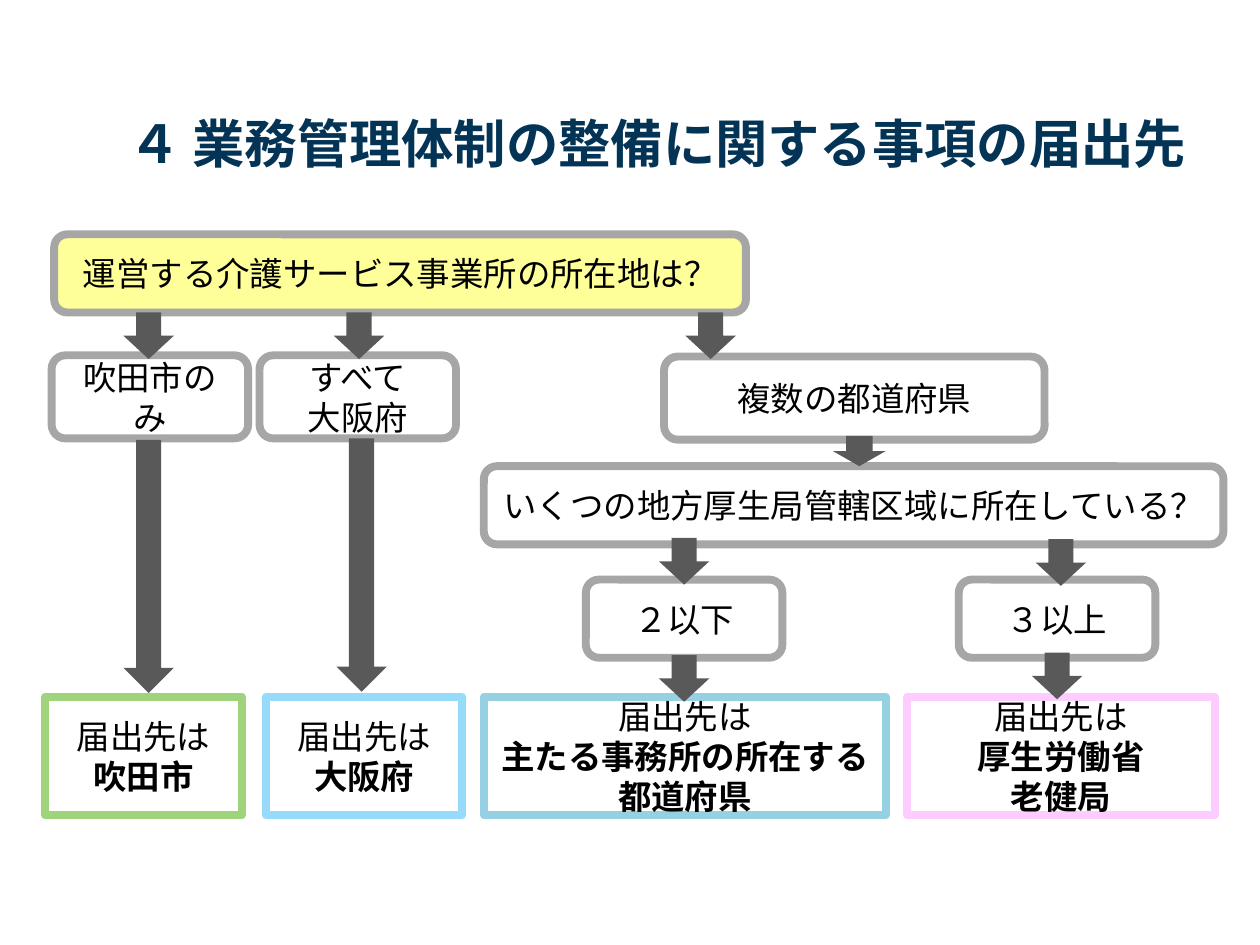
from lxml.etree import SubElement
from pptx import Presentation
from pptx.dml.color import RGBColor
from pptx.enum.shapes import MSO_SHAPE
from pptx.enum.text import MSO_ANCHOR, PP_ALIGN
from pptx.oxml.ns import qn
from pptx.util import Inches, Pt

NAVY = RGBColor(0x03, 0x33, 0x55)
BLACK = RGBColor(0x00, 0x00, 0x00)
WHITE = RGBColor(0xFF, 0xFF, 0xFF)
YELLOW = RGBColor(0xFF, 0xFF, 0x99)
GRAY = RGBColor(0xA6, 0xA6, 0xA6)
DARK_GRAY = RGBColor(0x59, 0x59, 0x59)
GREEN = RGBColor(0x9F, 0xD4, 0x7D)
SKY = RGBColor(0x97, 0xDB, 0xFB)
TEAL = RGBColor(0x95, 0xD1, 0xE2)
PINK = RGBColor(0xFF, 0xCC, 0xFF)


class FlowSlide:
    """Draws on a grid of 100 columns and 75 rows."""

    FONT = "Noto Sans CJK JP"
    TITLE_SIZE = Pt(29.9)
    BODY_SIZE = Pt(19.1)
    BORDER = Pt(4.5)

    def __init__(self, presentation):
        self.slide = presentation.slides.add_slide(presentation.slide_layouts[6])
        self.column = presentation.slide_width / 100
        self.row = presentation.slide_height / 75

    def place(self, left, top, width, height):
        return (round(left * self.column), round(top * self.row),
                round(width * self.column), round(height * self.row))

    def style(self, paragraph, size, color, bold=False):
        font = paragraph.font
        font.size, font.bold, font.name = size, bold, self.FONT
        font.color.rgb = color
        SubElement(font._element, qn("a:ea"), typeface=self.FONT)

    def title(self, text, *area):
        frame = self.slide.shapes.add_textbox(*self.place(*area)).text_frame
        frame.word_wrap = True
        frame.vertical_anchor = MSO_ANCHOR.MIDDLE
        paragraph = frame.paragraphs[0]
        paragraph.text = text
        paragraph.line_spacing = 0.9
        self.style(paragraph, self.TITLE_SIZE, NAVY, bold=True)
        # Hanging indent
        properties = paragraph._p.get_or_add_pPr()
        properties.set("marL", str(Inches(0.26)))
        properties.set("indent", str(-Inches(0.26)))

    def shape(self, kind, fill, *area):
        shape = self.slide.shapes.add_shape(kind, *self.place(*area))
        shape.shadow.inherit = False
        shape.fill.solid()
        shape.fill.fore_color.rgb = fill
        shape.line.fill.background()
        return shape

    def box(self, kind, lines, fill, border, *area):
        """Takes lines as (text, bold) pairs."""
        shape = self.shape(kind, fill, *area)
        shape.line.color.rgb = border
        shape.line.width = self.BORDER
        frame = shape.text_frame
        frame.word_wrap = True
        frame.vertical_anchor = MSO_ANCHOR.MIDDLE
        for index, (text, bold) in enumerate(lines):
            paragraph = frame.add_paragraph() if index else frame.paragraphs[0]
            paragraph.text = text
            paragraph.alignment = PP_ALIGN.CENTER
            self.style(paragraph, self.BODY_SIZE, BLACK, bold)

    def step(self, lines, *area, fill=WHITE):
        self.box(MSO_SHAPE.ROUNDED_RECTANGLE, [(line, False) for line in lines],
                 fill, GRAY, *area)

    def destination(self, name, border, left, width):
        self.box(MSO_SHAPE.RECTANGLE, [("届出先は", False), (name, True)],
                 WHITE, border, left, 55.3, width, 9.4)

    def arrow(self, left, top, width=4, height=3.7):
        self.shape(MSO_SHAPE.DOWN_ARROW, DARK_GRAY, left, top, width, height)


def main():
    presentation = Presentation()
    presentation.slide_width, presentation.slide_height = Inches(10), Inches(7.5)
    flow = FlowSlide(presentation)

    flow.title("４ 業務管理体制の整備に関する事項の届出先", 9.2, 7.8, 86.1, 7.6)

    # Questions and answers
    flow.step(["運営する介護サービス事業所の所在地は？"], 4.3, 18.6, 54.9, 6.2, fill=YELLOW)
    flow.step(["吹田市のみ"], 4.1, 28.2, 15.6, 6.6)
    flow.step(["すべて", "大阪府"], 20.6, 28.2, 15.6, 6.6)
    flow.step(["複数の都道府県"], 52.7, 28.3, 30.2, 6.6)
    flow.step(["いくつの地方厚生局管轄区域に所在している？"], 38.4, 37, 58.7, 6.2)
    flow.step(["２以下"], 46.5, 46, 15.6, 6.2)
    flow.step(["３以上"], 76.1, 46, 15.6, 6.2)

    # Where to file
    flow.destination("吹田市", GREEN, 3.6, 15.6)
    flow.destination("大阪府", SKY, 21.1, 15.6)
    flow.destination("主たる事務所の所在する\v都道府県", TEAL, 38.4, 31.9)
    flow.destination("厚生労働省\v老健局", PINK, 72, 24.4)

    # Short arrows between levels
    for left, top in ((9.8, 24.8), (26.5, 24.8), (54.4, 24.8),
                      (52.3, 42.7), (82.2, 42.8), (52.3, 52), (81.9, 51.8)):
        flow.arrow(left, top)
    flow.arrow(66.1, 34.6, width=4.2, height=2.4)

    # Long arrows straight to the destination
    for left, top in ((9.8, 34.9), (26.7, 34.8)):
        flow.arrow(left, top, height=20.1)

    presentation.save("out.pptx")


if __name__ == "__main__":
    main()
